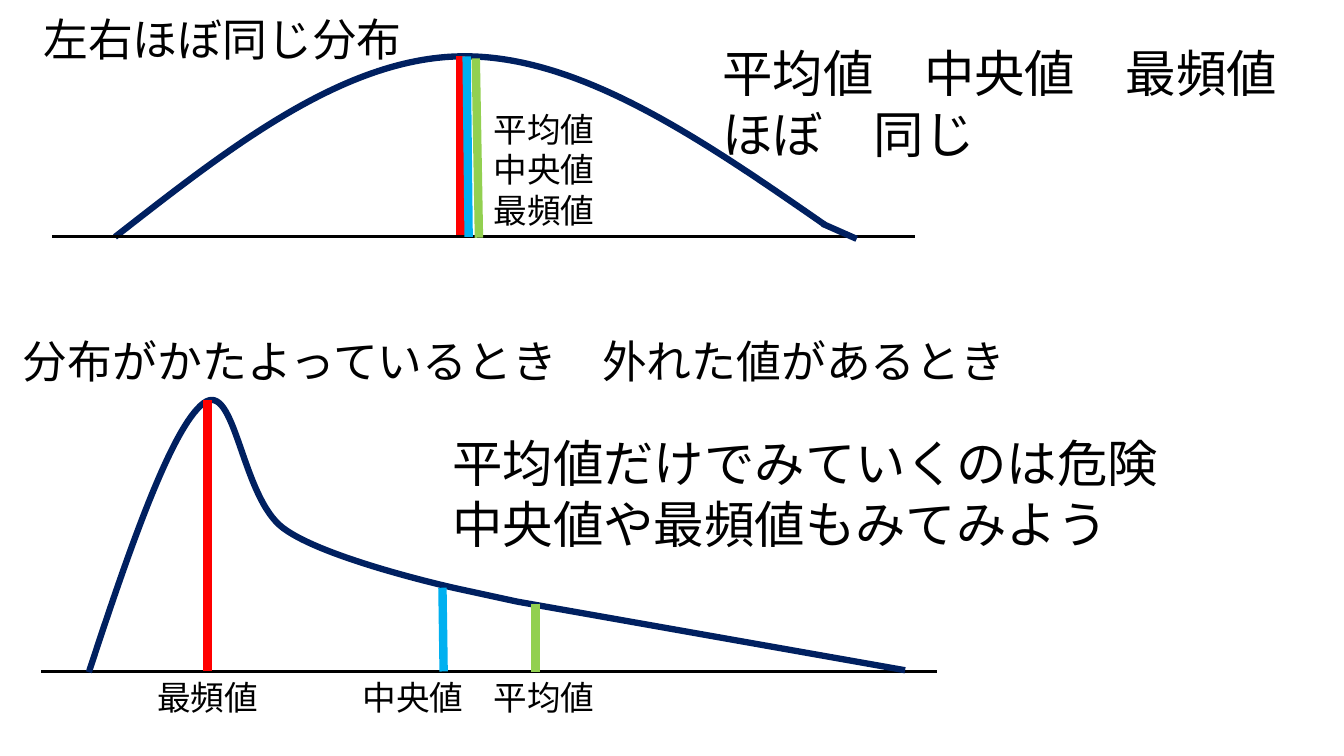
"""Build a slide comparing mean, median and mode in two distributions."""
from lxml.etree import SubElement
from pptx import Presentation
from pptx.dml.color import RGBColor
from pptx.enum.shapes import MSO_CONNECTOR as Connector
from pptx.enum.text import MSO_AUTO_SIZE as AutoSize
from pptx.oxml.ns import qn
from pptx.util import Cm, Pt

BLACK, NAVY = "000000", "002060"
RED, BLUE, GREEN = "FF0000", "00B0F0", "92D050"


def color(value):
    return RGBColor.from_string(value)


class SlideBuilder:
    font = "Calibri"
    curve_width = 4.5
    marker_width = 6
    axis_width = 2.25

    def __init__(self, slide):
        self.slide = slide

    def line(self, start, end, line_color, width):
        points = [Cm(value) for value in (*start, *end)]
        connector = self.slide.shapes.add_connector(Connector.STRAIGHT, *points)
        connector.line.color.rgb = color(line_color)
        connector.line.width = Pt(width)
        SubElement(connector._element.spPr, qn("a:effectLst"))

    def axis(self, left, right, height):
        self.line((left, height), (right, height), BLACK, self.axis_width)

    def marker(self, start, end, line_color):
        self.line(start, end, line_color, self.marker_width)

    def curve(self, start, steps):
        """Draw steps of one point as lines and of three points as Bezier curves."""
        builder = self.slide.shapes.build_freeform(Cm(start[0]), Cm(start[1]))
        anchors = [(Cm(x), Cm(y)) for x, y in (step[-1] for step in steps)]
        builder.add_line_segments(anchors, close=False)
        shape = builder.convert_to_shape()
        for segment, step in zip(shape._element.xpath(".//a:lnTo"), steps):
            if len(step) == 3:
                bezier = SubElement(segment.getparent(), qn("a:cubicBezTo"))
                segment.getparent().replace(segment, bezier)
                for x, y in step:
                    SubElement(bezier, qn("a:pt"), x=str(Cm(x) - shape.left),
                               y=str(Cm(y) - shape.top))
        shape.fill.background()
        shape.line.color.rgb = color(NAVY)
        shape.line.width = Pt(self.curve_width)
        shape.shadow.inherit = False

    def text(self, left, top, width, height, size, *lines):
        box = self.slide.shapes.add_textbox(Cm(left), Cm(top), Cm(width), Cm(height))
        frame = box.text_frame
        frame.word_wrap = False
        frame.auto_size = AutoSize.SHAPE_TO_FIT_TEXT
        for index, content in enumerate(lines):
            paragraph = frame.add_paragraph() if index else frame.paragraphs[0]
            run = paragraph.add_run()
            run.text = content
            run.font.name = self.font
            run.font.size = Pt(size)
            run.font.color.rgb = color(BLACK)

    def label(self, left, top, content):
        self.text(left, top, 3.07, 1.27, 24, content)


def draw_symmetric(builder):
    builder.curve((2.9, 5.97), [
        [(5.77, 3.73), (8.64, 1.47), (11.61, 1.42)],
        [(14.58, 1.37), (17.68, 3.51), (20.78, 5.66)],
    ])
    builder.marker((11.61, 1.42), (11.61, 5.97), RED)
    builder.text(12.19, 2.62, 3.07, 3.33, 24, "平均値", "中央値", "最頻値")
    builder.axis(1.32, 23.06, 5.97)
    builder.curve((20.73, 5.64), [[(21.59, 6.02)]])
    builder.marker((12.07, 5.99), (11.99, 1.47), GREEN)
    builder.marker((11.81, 5.97), (11.76, 1.42), BLUE)
    builder.text(17.96, 0.94, 14.63, 3.33, 36, "平均値　中央値　最頻値", "ほぼ　同じ")
    builder.text(0.84, 0.18, 9.63, 1.63, 32, "左右ほぼ同じ分布")


def draw_skewed(builder):
    builder.axis(1.04, 23.62, 16.92)
    for left, content in ((8.89, "中央値"), (12.19, "平均値"), (3.71, "最頻値")):
        builder.label(left, 16.93, content)
    builder.curve((2.24, 16.94), [
        [(3.23, 13.92), (4.32, 10.77), (5.13, 10.16)],
        [(5.94, 9.55), (6.07, 12.52), (7.14, 13.31)],
        [(8.2, 14.1), (11.51, 14.83), (11.51, 14.83)],
        [(13.03, 15.16)],
        [(22.81, 16.89)],
    ])
    builder.marker((11.18, 16.92), (11.15, 14.81), BLUE)
    builder.text(11.15, 10.77, 18.47, 3.33, 36,
                 "平均値だけでみていくのは危険", "中央値や最頻値もみてみよう")
    builder.marker((13.49, 15.21), (13.49, 16.94), GREEN)
    builder.marker((5.23, 10.08), (5.23, 16.92), RED)
    builder.text(0.33, 8.28, 25.6, 1.63, 32,
                 "分布がかたよっているとき　外れた値があるとき")


def main():
    presentation = Presentation()
    presentation.slide_width = Cm(33.87)
    presentation.slide_height = Cm(19.05)
    slide = presentation.slides.add_slide(presentation.slide_layouts[6])
    builder = SlideBuilder(slide)
    draw_symmetric(builder)
    draw_skewed(builder)
    presentation.save("out.pptx")


if __name__ == "__main__":
    main()
